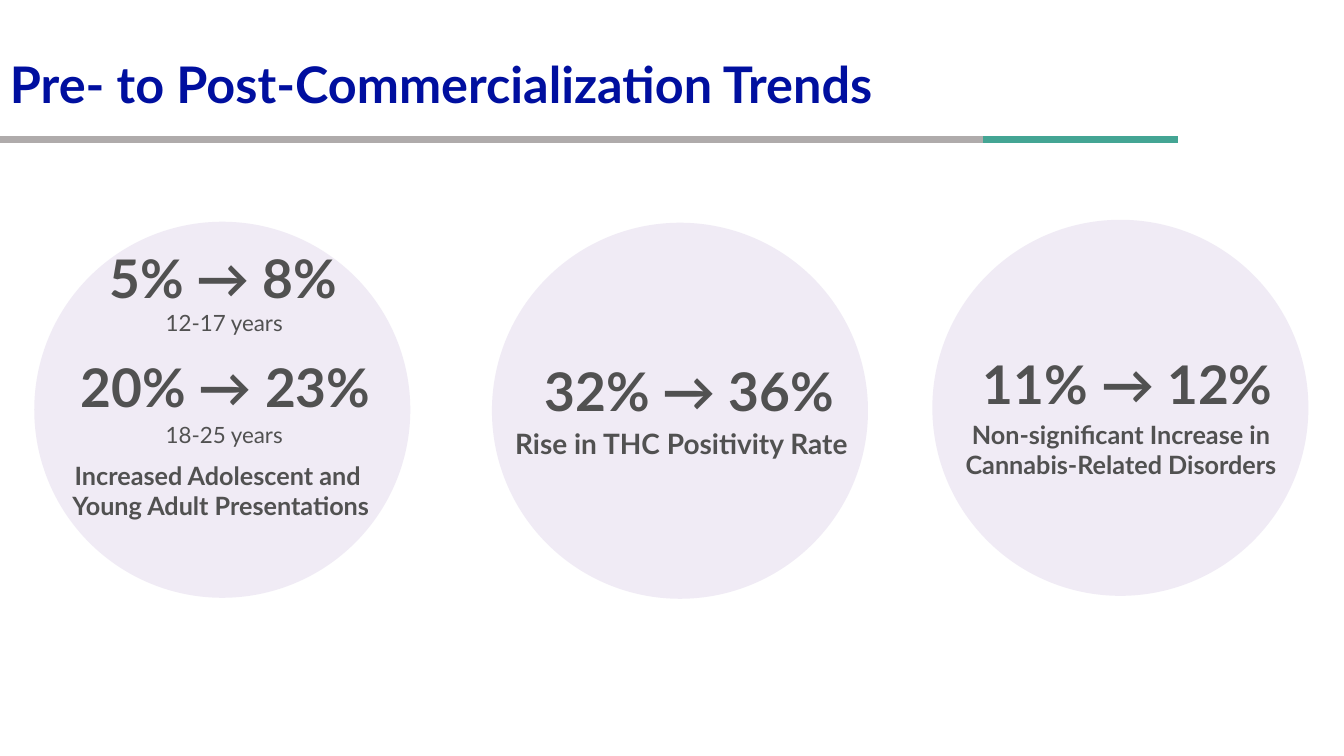
from lxml.etree import SubElement
from pptx import Presentation
from pptx.dml.color import RGBColor
from pptx.enum.shapes import MSO_CONNECTOR, MSO_SHAPE
from pptx.enum.text import MSO_ANCHOR, PP_ALIGN
from pptx.oxml.ns import qn
from pptx.util import Pt

COLORS = {
    "title": "000F9F",
    "text": "515151",
    "gray": "AFABAB",
    "green": "44A594",
    "disc": "8E6AB4",
}
DISC = 268.6
RULE_TOP = 99.7


def color(name):
    return RGBColor.from_string(COLORS[name])


def add_text(slide, text, left, top, width, height, size=18, bold=True,
             ink="text", align=PP_ALIGN.CENTER, space=None, inset=(0, 0)):
    box = slide.shapes.add_textbox(Pt(left), Pt(top), Pt(width), Pt(height))
    frame = box.text_frame
    frame.word_wrap = True
    frame.vertical_anchor = MSO_ANCHOR.TOP
    frame.margin_left = frame.margin_right = Pt(inset[0])
    frame.margin_top = frame.margin_bottom = Pt(inset[1])
    para = frame.paragraphs[0]
    para.text = text
    para.alignment = align
    para.line_spacing = space
    for run in para.runs:
        font = run.font
        font.name, font.size, font.bold = "Lato", Pt(size), bold
        font.color.rgb = color(ink)


def add_rule(slide, start, end, ink):
    rule = slide.shapes.add_connector(
        MSO_CONNECTOR.STRAIGHT, Pt(start), Pt(RULE_TOP), Pt(end), Pt(RULE_TOP))
    rule.line.width = Pt(4.5)
    rule.line.color.rgb = color(ink)
    SubElement(rule._element.spPr, qn("a:effectLst"))


def add_disc(slide, left, top):
    disc = slide.shapes.add_shape(
        MSO_SHAPE.OVAL, Pt(left), Pt(top), Pt(DISC), Pt(DISC))
    disc.shadow.inherit = False
    disc.line.fill.background()
    disc.fill.solid()
    disc.fill.fore_color.rgb = color("disc")
    tint = disc._element.spPr.find(".//" + qn("a:srgbClr"))
    SubElement(tint, qn("a:alpha"), val="13000")


def add_trend(slide, text, left, top):
    add_text(slide, text, left, top, 216, 35.3, size=38,
             align=PP_ALIGN.LEFT, space=Pt(38))


def add_age(slide, text, top):
    add_text(slide, text, -92.2, top, 504.7, 18.7, size=16, bold=False,
             space=Pt(18.5))


def add_label(slide, text, left, top, **style):
    add_text(slide, text, left, top, 322.6, 53.3, **style)


def main():
    deck = Presentation()
    deck.slide_width, deck.slide_height = Pt(960), Pt(540)
    slide = deck.slides.add_slide(deck.slide_layouts[6])

    # Heading with its two-tone rule
    add_text(slide, "Pre- to Post-Commercialization Trends", 0, 39.6, 858.2,
             69.8, size=36, ink="title", align=PP_ALIGN.LEFT, space=0.9,
             inset=(7.2, 3.6))
    add_rule(slide, 702, 841.7, "green")
    add_rule(slide, 0, 702, "gray")

    # Young people
    add_disc(slide, 24.5, 158.4)
    add_trend(slide, "5% → 8%", 78, 182.9)
    add_age(slide, "12-17 years", 221.4)
    add_trend(slide, "20% → 23%", 57.6, 260.6)
    add_age(slide, "18-25 years", 301.7)
    add_label(slide, "Increased Adolescent and \nYoung Adult Presentations",
              -3.6, 329)

    # THC positivity
    add_disc(slide, 351.4, 159.1)
    add_trend(slide, "32% → 36%", 388.8, 263.5)
    add_label(slide, "Rise in THC Positivity Rate", 325.4, 293, size=20,
              space=1.5)

    # Disorders
    add_disc(slide, 666, 157)
    add_trend(slide, "11% → 12%", 702, 258.5)
    add_label(slide, "Non-significant Increase in\nCannabis-Related Disorders",
              639.4, 299.5)

    deck.save("out.pptx")


if __name__ == "__main__":
    main()
